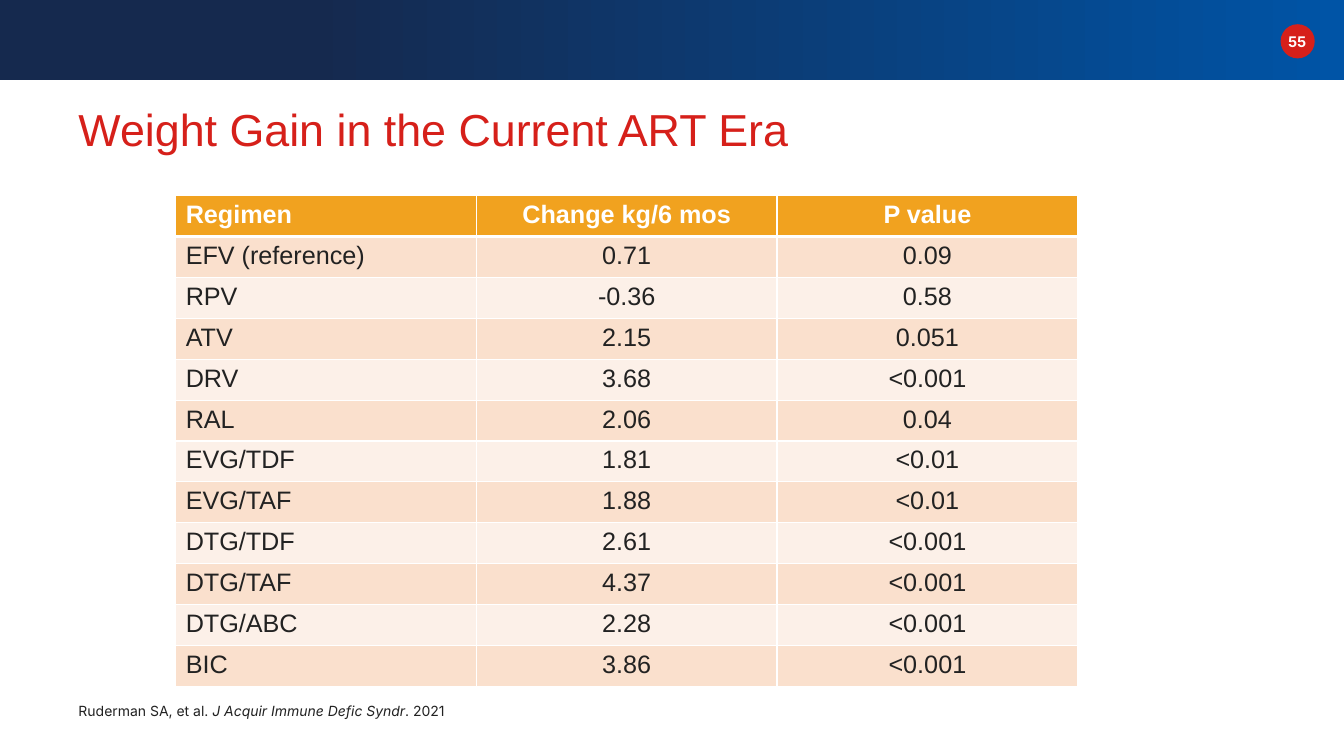
import dataclasses
import typing

import lxml.etree
import pptx
import pptx.dml.color
import pptx.enum.shapes
import pptx.enum.text
import pptx.oxml.ns
import pptx.util

Pt = pptx.util.Pt
ALIGN = pptx.enum.text.PP_ALIGN
ANCHOR = pptx.enum.text.MSO_ANCHOR
SHAPE = pptx.enum.shapes.MSO_SHAPE

WHITE = "FFFFFF"
RED = "D6201A"
INK = "222222"
HEADER_FILL = "F1A21F"
BAND_FILLS = ("FAE0CD", "FCF0E8")
ROW_HEIGHT = 29.22
COLUMN_WIDTH = 214.8


@dataclasses.dataclass(frozen=True)
class Span:
    text: str
    italic: bool = False


@dataclasses.dataclass(frozen=True)
class Label:
    left: float
    top: float
    width: float
    height: float
    spans: tuple[Span, ...]
    font: dict[str, typing.Any]
    color: str
    align: ALIGN = ALIGN.LEFT


@dataclasses.dataclass(frozen=True)
class Result:
    regimen: str
    change: str
    p_value: str


LABELS = (
    Label(910.8, 19.44, 31.68, 20.16, (Span("55"),),
          {"name": "Inter", "size": Pt(10.5), "bold": True}, WHITE, ALIGN.CENTER),
    Label(49, 66.24, 828, 51.12, (Span("Weight Gain in the Current ART Era"),),
          {"name": "Arial", "size": Pt(32)}, RED),
    Label(49, 498.24, 619.2, 19.44,
          (Span("Ruderman SA, et al. "),
           Span("J Acquir Immune Defic Syndr", italic=True),
           Span(". 2021")),
          {"name": "Inter", "size": Pt(10)}, INK),
)

RESULTS = (
    Result("Regimen", "Change kg/6 mos", "P value"),
    Result("EFV (reference)", "0.71", "0.09"),
    Result("RPV", "-0.36", "0.58"),
    Result("ATV", "2.15", "0.051"),
    Result("DRV", "3.68", "<0.001"),
    Result("RAL", "2.06", "0.04"),
    Result("EVG/TDF", "1.81", "<0.01"),
    Result("EVG/TAF", "1.88", "<0.01"),
    Result("DTG/TDF", "2.61", "<0.001"),
    Result("DTG/TAF", "4.37", "<0.001"),
    Result("DTG/ABC", "2.28", "<0.001"),
    Result("BIC", "3.86", "<0.001"),
)


def rgb(value: str) -> pptx.dml.color.RGBColor:
    return pptx.dml.color.RGBColor.from_string(value)


def apply(target: typing.Any, values: dict[str, typing.Any]) -> None:
    for name, value in values.items():
        setattr(target, name, value)


def write(para: typing.Any, span: Span, font: dict[str, typing.Any], color: str) -> None:
    run = para.add_run()
    run.text = span.text
    apply(run.font, {**font, "italic": span.italic})
    run.font.color.rgb = rgb(color)


def add_plain_shape(page: typing.Any, kind: SHAPE, left: float, top: float,
                    width: float, height: float) -> typing.Any:
    shape = page.shapes.add_shape(kind, Pt(left), Pt(top), Pt(width), Pt(height))
    shape.shadow.inherit = False
    shape.line.fill.background()
    return shape


def add_banner(page: typing.Any) -> None:
    banner = add_plain_shape(page, SHAPE.RECTANGLE, 0, 0, 960, 57.3)
    banner.fill.gradient()
    banner.fill.gradient_angle = 0
    stops = ((0.23, "15294E"), (1, "0054A6"))
    for stop, (position, color) in zip(banner.fill.gradient_stops, stops):
        stop.position = position
        stop.color.rgb = rgb(color)


def add_badge(page: typing.Any) -> None:
    badge = add_plain_shape(page, SHAPE.OVAL, 914.7, 17.3, 24.4, 24.4)
    badge.fill.solid()
    badge.fill.fore_color.rgb = rgb(RED)


def add_label(page: typing.Any, label: Label) -> None:
    box = page.shapes.add_textbox(
        Pt(label.left), Pt(label.top), Pt(label.width), Pt(label.height))
    apply(box.text_frame, {"word_wrap": True, "vertical_anchor": ANCHOR.MIDDLE})
    para = box.text_frame.paragraphs[0]
    para.alignment = label.align
    for span in label.spans:
        write(para, span, label.font, label.color)


def add_borders(cell: typing.Any, widths: dict[str, float]) -> None:
    properties = cell._tc.get_or_add_tcPr()
    qn = pptx.oxml.ns.qn
    for side, width in widths.items():
        line = lxml.etree.SubElement(properties, qn(f"a:ln{side}"), w=str(Pt(width)))
        fill = lxml.etree.SubElement(line, qn("a:solidFill"))
        lxml.etree.SubElement(fill, qn("a:srgbClr"), val=WHITE)


def add_results(page: typing.Any) -> None:
    table = page.shapes.add_table(
        len(RESULTS), 3, Pt(125.5), Pt(139.8),
        Pt(3 * COLUMN_WIDTH), Pt(len(RESULTS) * ROW_HEIGHT)).table
    for column in table.columns:
        column.width = Pt(COLUMN_WIDTH)
    for index, result in enumerate(RESULTS):
        table.rows[index].height = Pt(ROW_HEIGHT)
        header = index == 0
        fill = HEADER_FILL if header else BAND_FILLS[(index - 1) % 2]
        font = {"name": "Arial", "size": Pt(18), "bold": header}
        borders = {"L": 1, "R": 1, "T": 3 if index == 1 else 1, "B": 3 if header else 1}
        for position, text in enumerate(dataclasses.astuple(result)):
            cell = table.cell(index, position)
            add_borders(cell, borders)
            cell.fill.solid()
            cell.fill.fore_color.rgb = rgb(fill)
            para = cell.text_frame.paragraphs[0]
            para.alignment = ALIGN.CENTER if position else ALIGN.LEFT
            write(para, Span(text), font, WHITE if header else INK)


def main() -> None:
    deck = pptx.Presentation()
    apply(deck, {"slide_width": Pt(960), "slide_height": Pt(540)})
    page = deck.slides.add_slide(deck.slide_layouts[6])
    add_banner(page)
    add_badge(page)
    add_results(page)
    for label in LABELS:
        add_label(page, label)
    deck.save("out.pptx")


if __name__ == "__main__":
    main()
